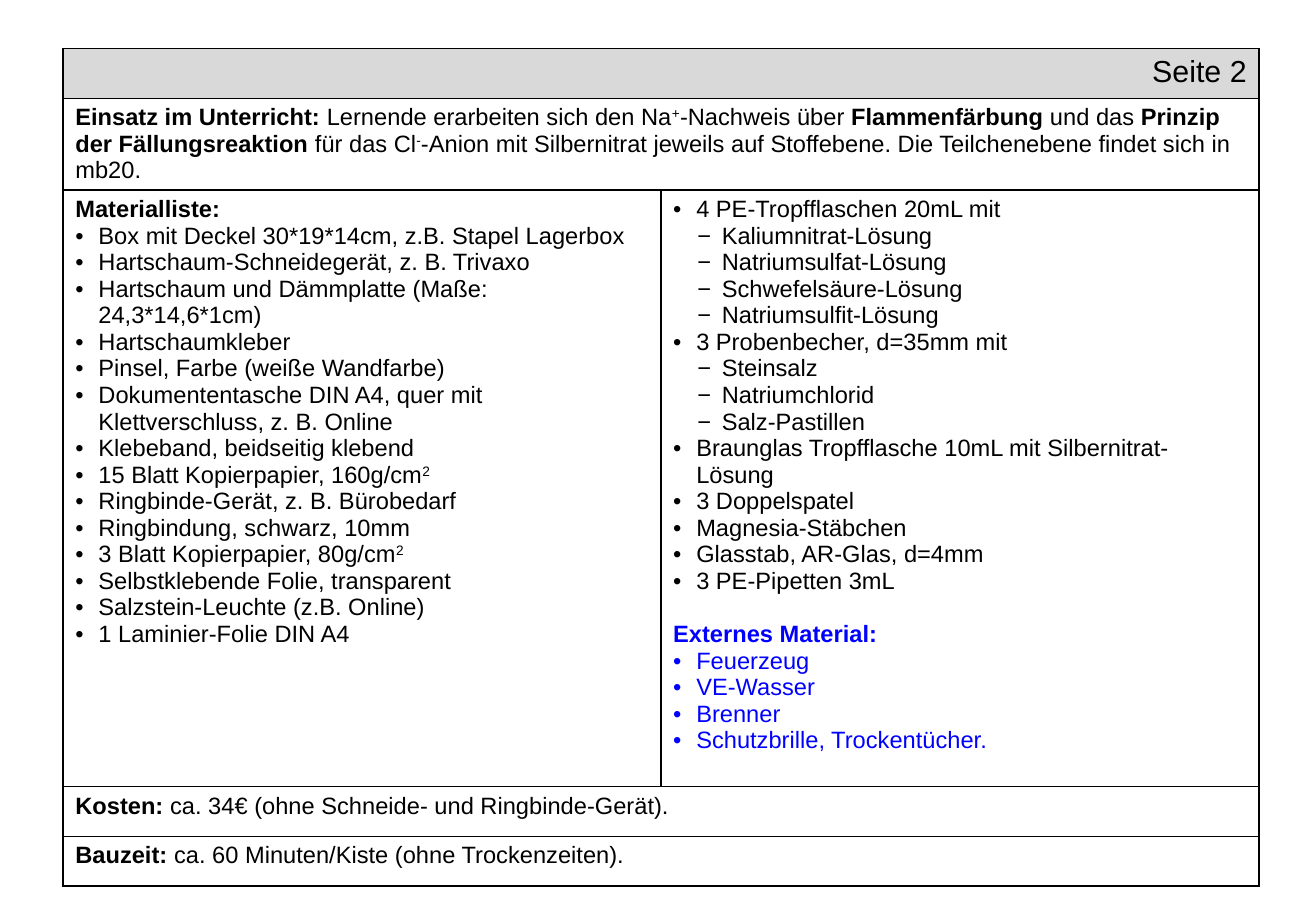
import pptx
import pptx.dml.color
import pptx.enum.text
import pptx.oxml.ns
import pptx.util
from lxml import etree
from pptx.util import Inches

BLACK, BLUE, GREY, WHITE = "000000", "0000FF", "D9D9D9", "FFFFFF"
COLUMN_WIDTH = 4.92
ROW_HEIGHTS = [0.41, 0.75, 4.91, 0.41, 0.41]
BULLETS = {1: ("•", 0.19, 0.19), 2: ("−", 0.4, 0.2)}  # level: sign, margin, hang

# In the texts, ** switches bold and ^ switches superscript
USE = ("**Einsatz im Unterricht: **Lernende erarbeiten sich den Na^+^-Nachweis über "
       "**Flammenfärbung** und das **Prinzip der Fällungsreaktion **für das Cl^-^-Anion "
       "mit Silbernitrat jeweils auf Stoffebene. Die Teilchenebene findet sich in mb20.")
MATERIALS = [
    "Box mit Deckel 30*19*14cm, z.B. Stapel Lagerbox",
    "Hartschaum-Schneidegerät, z. B. Trivaxo",
    "Hartschaum und Dämmplatte (Maße: 24,3*14,6*1cm)",
    "Hartschaumkleber",
    "Pinsel, Farbe (weiße Wandfarbe)",
    "Dokumententasche DIN A4, quer mit Klettverschluss, z. B. Online",
    "Klebeband, beidseitig klebend",
    "15 Blatt Kopierpapier, 160g/cm^2^",
    "Ringbinde-Gerät, z. B. Bürobedarf",
    "Ringbindung, schwarz, 10mm",
    "3 Blatt Kopierpapier, 80g/cm^2^",
    "Selbstklebende Folie, transparent",
    "Salzstein-Leuchte (z.B. Online)",
    "1 Laminier-Folie DIN A4",
]
CHEMICALS = [
    ("4 PE-Tropfflaschen 20mL mit",
     ["Kaliumnitrat-Lösung", "Natriumsulfat-Lösung", "Schwefelsäure-Lösung",
      "Natriumsulfit-Lösung"]),
    ("3 Probenbecher, d=35mm mit", ["Steinsalz", "Natriumchlorid", "Salz-Pastillen"]),
    ("Braunglas Tropfflasche 10mL mit Silbernitrat-Lösung", []),
    ("3 Doppelspatel", []),
    ("Magnesia-Stäbchen", []),
    ("Glasstab, AR-Glas, d=4mm", []),
    ("3 PE-Pipetten 3mL", []),
]
EXTERNAL = ["Feuerzeug", "VE-Wasser", "Brenner", "Schutzbrille, Trockentücher."]


def rgb(color):
    return pptx.dml.color.RGBColor.from_string(color)


def add_xml(parent, tag, **attributes):
    element = etree.SubElement(parent, pptx.oxml.ns.qn(tag))
    for name, value in attributes.items():
        element.set(name, str(value))
    return element


def style_cell(cell, fill):
    """Black one-point borders and a plain fill."""
    tc_pr = cell._tc.get_or_add_tcPr()
    for side in "LRTB":
        line = add_xml(tc_pr, f"a:ln{side}", w=pptx.util.Pt(1))
        add_xml(add_xml(line, "a:solidFill"), "a:srgbClr", val=BLACK)
    cell.fill.solid()
    cell.fill.fore_color.rgb = rgb(fill)


def add_runs(p, text):
    for i, part in enumerate(text.split("**")):
        for j, piece in enumerate(part.split("^")):
            if piece:
                r = p.add_run()
                r.text = piece
                if i % 2:
                    r.font.bold = True
                if j % 2:
                    r._r.get_or_add_rPr().set("baseline", "30000")


def add_text(cell, text, level=0, color=BLACK, size=14):
    """Add one paragraph; level 0 has no bullet."""
    tf = cell.text_frame
    p = tf.paragraphs[0] if not tf.text else tf.add_paragraph()
    if level:
        sign, margin, hang = BULLETS[level]
        p_pr = p._p.get_or_add_pPr()
        p_pr.set("marL", str(Inches(margin)))
        p_pr.set("indent", str(-Inches(hang)))
        add_xml(p_pr, "a:buFont", typeface="Arial")
        add_xml(p_pr, "a:buChar", char=sign)
    p.font.name = "Arial"
    p.font.size = pptx.util.Pt(size)
    p.font.color.rgb = rgb(color)
    add_runs(p, text)
    return p


def add_grid(slide):
    """Two columns; every row but the material lists is merged."""
    frame = slide.shapes.add_table(len(ROW_HEIGHTS), 2, Inches(0.52), Inches(0.4),
                                   Inches(2 * COLUMN_WIDTH), Inches(sum(ROW_HEIGHTS)))
    table = frame.table
    table.first_row = table.horz_banding = False
    for column in table.columns:
        column.width = Inches(COLUMN_WIDTH)
    for i, height in enumerate(ROW_HEIGHTS):
        table.rows[i].height = Inches(height)
        for j in range(2):
            style_cell(table.cell(i, j), WHITE if i else GREY)
        if i != 2:
            table.cell(i, 0).merge(table.cell(i, 1))
    return table


def main():
    prs = pptx.Presentation()
    prs.slide_width, prs.slide_height = Inches(10.83), Inches(7.5)
    s = prs.slides.add_slide(prs.slide_layouts[6])
    table = add_grid(s)

    # Header and full-width rows
    p = add_text(table.cell(0, 0), "Seite 2", size=18)
    p.alignment = pptx.enum.text.PP_ALIGN.RIGHT
    add_text(table.cell(1, 0), USE)
    add_text(table.cell(3, 0), "**Kosten:** ca. 34€ (ohne Schneide- und Ringbinde-Gerät).")
    add_text(table.cell(4, 0), "**Bauzeit:** ca. 60 Minuten/Kiste (ohne Trockenzeiten).")

    # Material list
    left, right = table.cell(2, 0), table.cell(2, 1)
    add_text(left, "**Materialliste:**")
    for item in MATERIALS:
        add_text(left, item, level=1)

    # Chemicals and tools
    for item, contents in CHEMICALS:
        add_text(right, item, level=1)
        for content in contents:
            add_text(right, content, level=2)

    # External material
    p = add_text(right, "**Externes Material:**", color=BLUE)
    p.space_before = pptx.util.Pt(16)
    for item in EXTERNAL:
        add_text(right, item, level=1, color=BLUE)

    prs.save("out.pptx")


if __name__ == "__main__":
    main()
